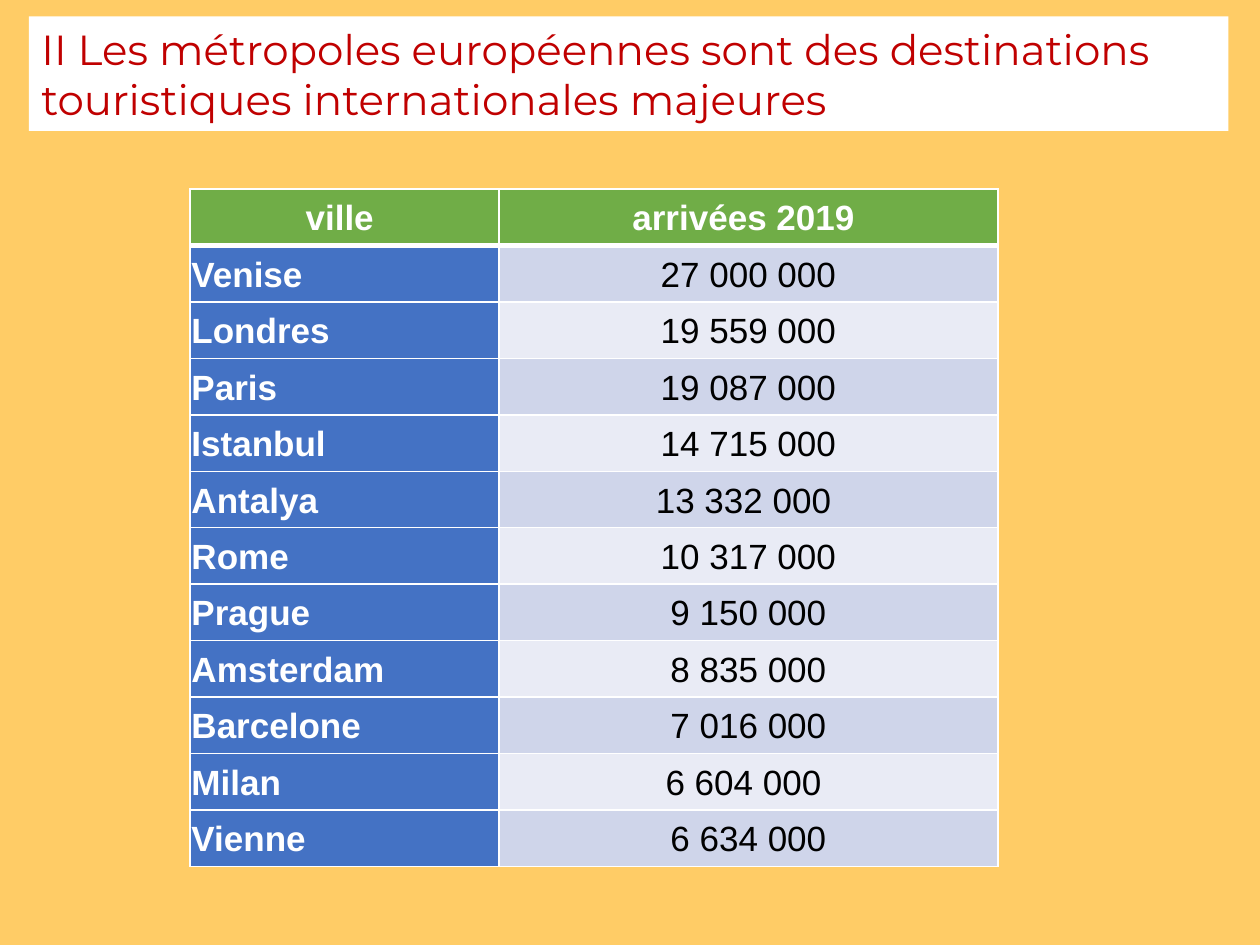
from lxml import etree
from pptx import Presentation
from pptx.dml.color import RGBColor
from pptx.enum.shapes import MSO_SHAPE
from pptx.enum.text import MSO_ANCHOR, MSO_AUTO_SIZE, PP_ALIGN
from pptx.oxml.ns import qn
from pptx.util import Inches, Pt

RECTANGLE = MSO_SHAPE.RECTANGLE
MIDDLE = MSO_ANCHOR.MIDDLE
FIT_SHAPE = MSO_AUTO_SIZE.SHAPE_TO_FIT_TEXT
LEFT, CENTER = PP_ALIGN.LEFT, PP_ALIGN.CENTER

COLORS = {
    "background": "FFCC66",
    "white": "FFFFFF",
    "black": "000000",
    "title": "C00000",
    "header": "70AD47",
    "city": "4472C4",
    "odd row": "CFD5EA",
    "even row": "E9EBF5",
}
ROWS = [
    ("ville ", "arrivées 2019 "),
    ("Venise", "27 000 000"),
    ("Londres", "19 559 000"),
    ("Paris", "19 087 000"),
    ("Istanbul", "14 715 000"),
    ("Antalya", "13 332 000 "),
    ("Rome", "10 317 000"),
    ("Prague", "9 150 000"),
    ("Amsterdam", "8 835 000"),
    ("Barcelone", "7 016 000"),
    ("Milan", "6 604 000 "),
    ("Vienne", "6 634 000"),
]
COLUMN_WIDTHS = [2.45, 3.96]
ROW_HEIGHT = 5.38 / len(ROWS)


def add_run(paragraph, text, font_name, size, color, bold=False):
    run = paragraph.add_run()
    run.text = text
    run.font.name = font_name
    run.font.size = Pt(size)
    run.font.bold = bold
    run.font.color.rgb = RGBColor.from_string(COLORS[color])


def add_border(cell, side, points):
    """Draw a white line on one side (L, R, T or B); call before setting the fill."""
    line = etree.SubElement(cell._tc.get_or_add_tcPr(), qn(f"a:ln{side}"), w=str(Pt(points)))
    fill = etree.SubElement(line, qn("a:solidFill"))
    etree.SubElement(fill, qn("a:srgbClr"), val=COLORS["white"])


presentation = Presentation()
presentation.slide_width = Inches(10)
presentation.slide_height = Inches(7.5)
slide = presentation.slides.add_slide(presentation.slide_layouts[6])
slide.background.fill.solid()
slide.background.fill.fore_color.rgb = RGBColor.from_string(COLORS["background"])

# Title
title = slide.shapes.add_shape(RECTANGLE, Inches(0.23), Inches(0.13), Inches(9.52), Inches(0.91))
title.shadow.inherit = False
title.fill.solid()
title.fill.fore_color.rgb = RGBColor.from_string(COLORS["white"])
title.line.fill.background()
title.text_frame.word_wrap = True
title.text_frame.auto_size = FIT_SHAPE
paragraph = title.text_frame.paragraphs[0]
paragraph.alignment = LEFT
add_run(
    paragraph,
    "II Les métropoles européennes sont des destinations touristiques internationales majeures",
    "Montserrat", 24, "title",
)

# Table of arrivals by city
table = slide.shapes.add_table(
    len(ROWS), len(COLUMN_WIDTHS), Inches(1.51), Inches(1.5),
    Inches(sum(COLUMN_WIDTHS)), Inches(ROW_HEIGHT * len(ROWS)),
).table
for column, width in zip(table.columns, COLUMN_WIDTHS):
    column.width = Inches(width)

for row_index, values in enumerate(ROWS):
    table.rows[row_index].height = Inches(ROW_HEIGHT)
    is_header = row_index == 0
    for column_index, text in enumerate(values):
        is_city = column_index == 0 and not is_header
        is_bold = is_header or is_city
        if is_header:
            fill_color = "header"
        elif is_city:
            fill_color = "city"
        else:
            fill_color = "odd row" if row_index % 2 else "even row"

        cell = table.cell(row_index, column_index)
        for side in "LRTB":
            under_header = (row_index, side) in [(0, "B"), (1, "T")]
            add_border(cell, side, 3 if under_header else 1)
        cell.fill.solid()
        cell.fill.fore_color.rgb = RGBColor.from_string(COLORS[fill_color])
        cell.vertical_anchor = MIDDLE
        cell.margin_left = cell.margin_right = Inches(0.01)
        cell.margin_top = cell.margin_bottom = Inches(0.01)

        paragraph = cell.text_frame.paragraphs[0]
        paragraph.alignment = LEFT if is_city else CENTER
        paragraph.line_spacing = 1.07
        paragraph.space_after = Pt(8)
        add_run(paragraph, text, "Arial", 20, "white" if is_bold else "black", is_bold)

presentation.save("out.pptx")
